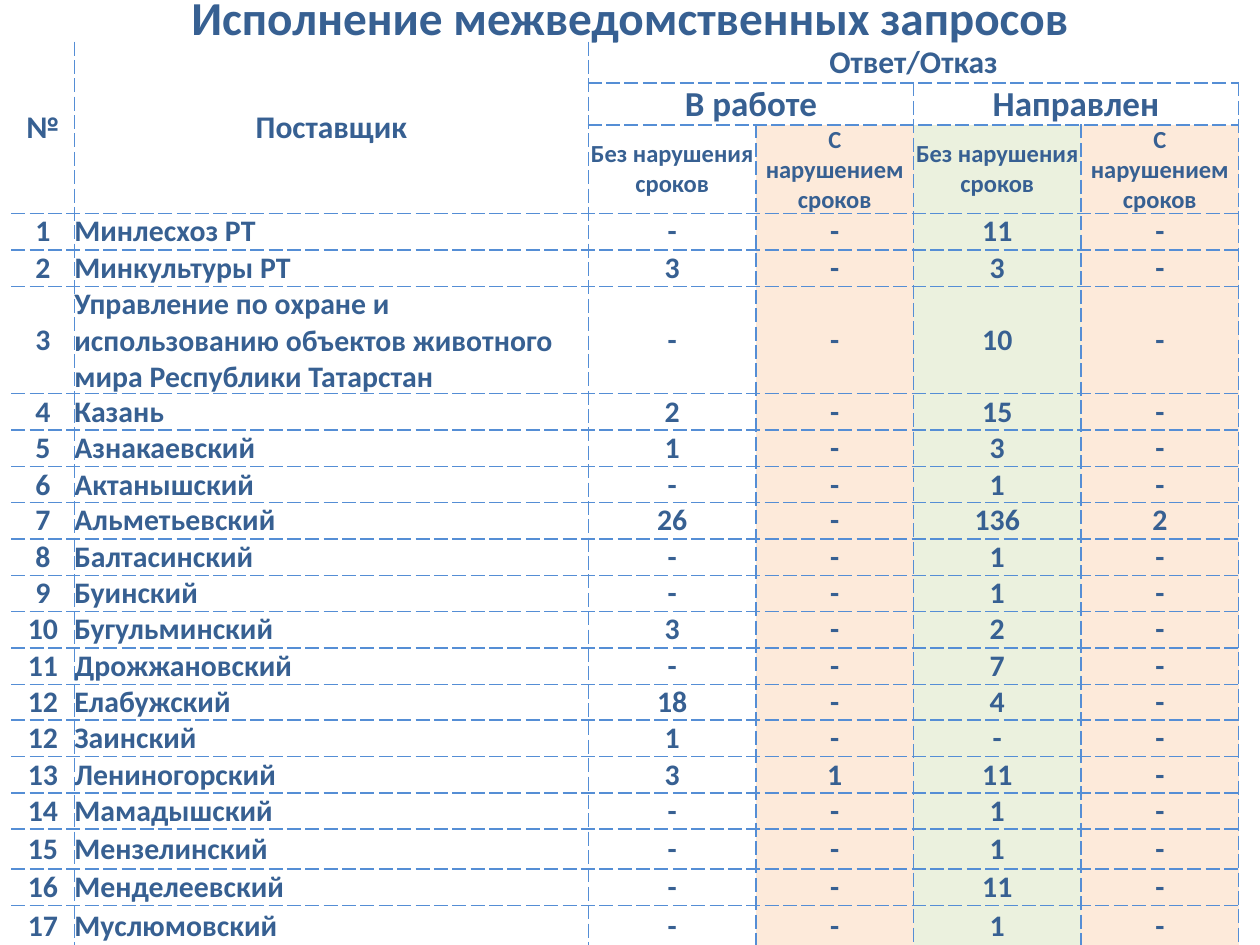
from typing import NamedTuple

from lxml import etree
from pptx import Presentation
from pptx.dml.color import RGBColor
from pptx.enum import text
from pptx.oxml import ns
from pptx.util import Inches, Pt

COLORS = {"text": "376092", "line": "558ED5", "late": "FDEADA", "sent": "EBF1DE"}
FILLS = {3: "late", 4: "sent", 5: "late"}
COLUMN_WIDTHS = [0.5, 4.08, 1.33, 1.25, 1.33, 1.25]
ROW_HEIGHTS = [0.33, 0.33, 0.7, 0.29, 0.29, 0.85] + [0.29, 0.29, 0.28] * 4 + [0.32, 0.29, 0.32]
HEADER_ROWS = 3


class Header(NamedTuple):
    row: int
    col: int
    label: str
    size: int
    rows: int = 1
    cols: int = 1


class Supplier(NamedTuple):
    number: str
    name: str
    working: str = "-"
    working_late: str = "-"
    sent: str = "1"
    sent_late: str = "-"


HEADERS = [
    Header(0, 0, "№", 18, rows=3),
    Header(0, 1, "Поставщик", 18, rows=3),
    Header(0, 2, "Ответ/Отказ", 18, cols=4),
    Header(1, 2, "В работе", 20, cols=2),
    Header(1, 4, "Направлен", 20, cols=2),
    Header(2, 2, "Без нарушения сроков", 14),
    Header(2, 3, "С нарушением сроков", 14),
    Header(2, 4, "Без нарушения сроков", 14),
    Header(2, 5, "С нарушением сроков", 14),
]

SUPPLIERS = [
    Supplier("1", "Минлесхоз РТ", sent="11"),
    Supplier("2", "Минкультуры РТ", working="3", sent="3"),
    Supplier("3", "Управление по охране и использованию объектов животного "
             "мира Республики Татарстан", sent="10"),
    Supplier("4", "Казань", working="2", sent="15"),
    Supplier("5", "Азнакаевский", working="1", sent="3"),
    Supplier("6", "Актанышский"),
    Supplier("7", "Альметьевский", working="26", sent="136", sent_late="2"),
    Supplier("8", "Балтасинский"),
    Supplier("9", "Буинский"),
    Supplier("10", "Бугульминский", working="3", sent="2"),
    Supplier("11", "Дрожжановский", sent="7"),
    Supplier("12", "Елабужский", working="18", sent="4"),
    Supplier("12", "Заинский", working="1", sent="-"),
    Supplier("13", "Лениногорский", working="3", working_late="1", sent="11"),
    Supplier("14", "Мамадышский"),
    Supplier("15", "Мензелинский"),
    Supplier("16", "Менделеевский", sent="11"),
    Supplier("17", "Муслюмовский"),
]


def write(tf, label: str, size: int, centered: bool = True) -> None:
    p = tf.paragraphs[0]
    p.text = label
    p.alignment = text.PP_ALIGN.CENTER if centered else text.PP_ALIGN.LEFT
    p.font.name = "Calibri"
    p.font.size = Pt(size)
    p.font.bold = True
    p.font.color.rgb = RGBColor.from_string(COLORS["text"])


def border_sides(cell, row: int, col: int) -> str:
    sides = "LRTB"
    if cell.is_spanned:
        sides = "LR" if col < 2 else "RTB"
    if col == 0:
        sides = sides.replace("L", "")
    if row == 0:
        sides = sides.replace("T", "")
        if col >= 2:
            sides = sides.replace("R", "")
    return sides


def style_cell(cell, row: int, col: int) -> None:
    late_header = row == HEADER_ROWS - 1 and FILLS.get(col) == "late"
    cell.margin_left = cell.margin_right = Inches(0.02 if late_header else 0)
    cell.margin_top = cell.margin_bottom = 0
    cell.vertical_anchor = text.MSO_ANCHOR.MIDDLE
    tc_pr = cell._tc.get_or_add_tcPr()
    sides = border_sides(cell, row, col)
    for side in "LRTB":
        ln = etree.SubElement(tc_pr, ns.qn(f"a:ln{side}"), w=str(Pt(1)))
        if side in sides:
            fill = etree.SubElement(ln, ns.qn("a:solidFill"))
            etree.SubElement(fill, ns.qn("a:srgbClr"), val=COLORS["line"])
            etree.SubElement(ln, ns.qn("a:prstDash"), val="sysDash")
        else:
            etree.SubElement(ln, ns.qn("a:noFill"))
    if row >= HEADER_ROWS - 1 and col in FILLS:
        cell.fill.solid()
        cell.fill.fore_color.rgb = RGBColor.from_string(COLORS[FILLS[col]])
    else:
        cell.fill.background()


def add_title(s) -> None:
    tf = s.shapes.add_textbox(Inches(0), Inches(-0.14), Inches(10), Inches(0.56)).text_frame
    tf.word_wrap = True
    tf.auto_size = text.MSO_AUTO_SIZE.SHAPE_TO_FIT_TEXT
    write(tf, "Исполнение межведомственных запросов", 27)


def add_requests_table(s) -> None:
    table = s.shapes.add_table(
        len(ROW_HEIGHTS), len(COLUMN_WIDTHS), Inches(0.09), Inches(0.33),
        Inches(sum(COLUMN_WIDTHS)), Inches(sum(ROW_HEIGHTS))).table
    table.first_row = table.horz_banding = False
    for column, width in zip(table.columns, COLUMN_WIDTHS):
        column.width = Inches(width)
    for row, height in zip(table.rows, ROW_HEIGHTS):
        row.height = Inches(height)
    for h in HEADERS:
        cell = table.cell(h.row, h.col)
        if h.rows * h.cols > 1:
            cell.merge(table.cell(h.row + h.rows - 1, h.col + h.cols - 1))
        write(cell.text_frame, h.label, h.size)
    for row, supplier in enumerate(SUPPLIERS, HEADER_ROWS):
        for col, value in enumerate(supplier):
            write(table.cell(row, col).text_frame, value, 17, centered=col != 1)
    for row in range(len(ROW_HEIGHTS)):
        for col in range(len(COLUMN_WIDTHS)):
            style_cell(table.cell(row, col), row, col)


def main() -> None:
    prs = Presentation()
    prs.slide_width, prs.slide_height = Inches(10), Inches(7.5)
    s = prs.slides.add_slide(prs.slide_layouts[6])
    add_title(s)
    add_requests_table(s)
    prs.save("out.pptx")


if __name__ == "__main__":
    main()
